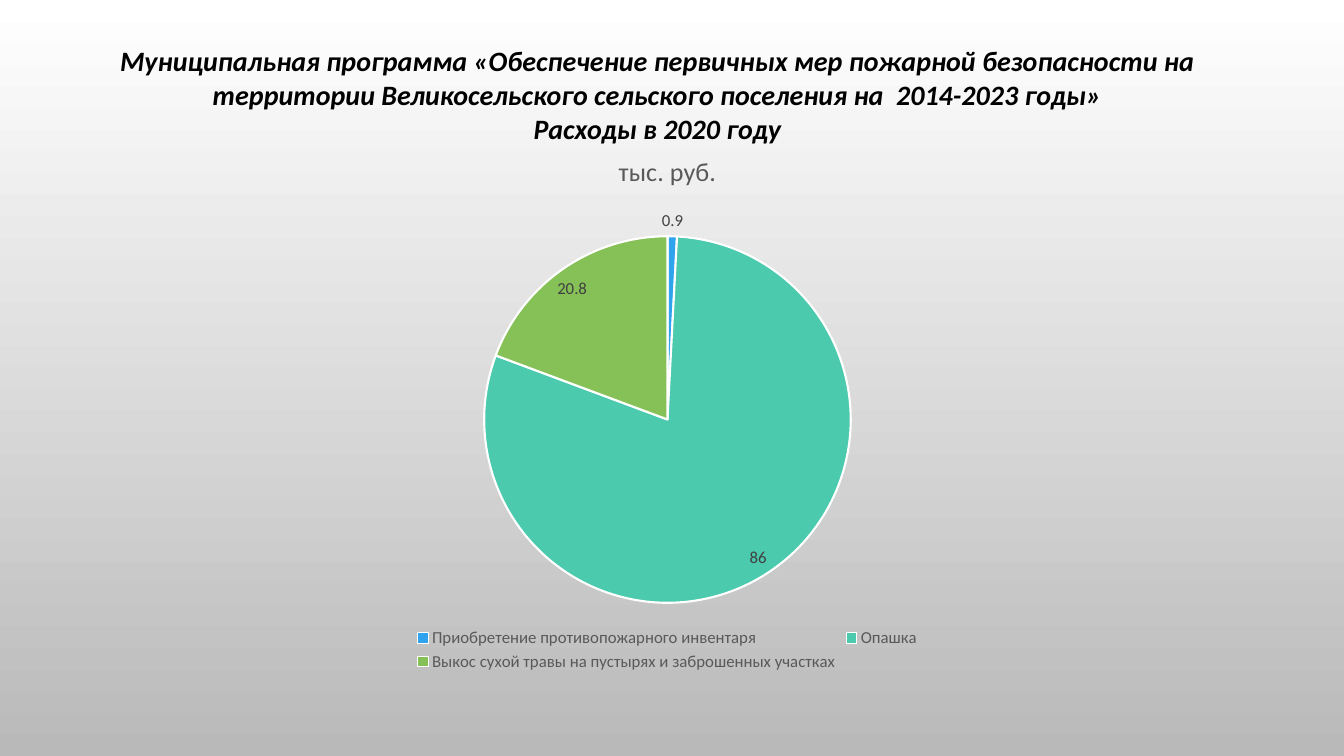
import pptx
import pptx.chart.data
import pptx.dml.color
import pptx.enum.chart
import pptx.enum.text
import pptx.util

RGB = pptx.dml.color.RGBColor
BLACK = RGB(0x00, 0x00, 0x00)
WHITE = RGB(0xFF, 0xFF, 0xFF)
SILVER = RGB(0xB9, 0xB9, 0xB9)
GREY = RGB(0x59, 0x59, 0x59)
DARK = RGB(0x40, 0x40, 0x40)
BLUE = RGB(0x2F, 0xA3, 0xEE)
TEAL = RGB(0x4B, 0xCA, 0xAD)
GREEN = RGB(0x86, 0xC1, 0x57)
FACE = "Calibri"
SCALE = 914400 / 100.8


def px(*nums):
    return [pptx.util.Emu(round(n * SCALE)) for n in nums]


def write(frame, text, size=12, color=GREY, bold=False, italic=False):
    for i, line in enumerate(text.split("\n")):
        para = frame.add_paragraph() if i else frame.paragraphs[0]
        para.alignment = pptx.enum.text.PP_ALIGN.CENTER
        run = para.add_run()
        run.text = line
        font = run.font
        font.name, font.size = FACE, pptx.util.Pt(size)
        font.bold, font.italic = bold, italic
        font.color.rgb = color


deck = pptx.Presentation()
deck.slide_width, deck.slide_height = px(1344, 756)
slide = deck.slides.add_slide(deck.slide_layouts[6])

back = slide.background.fill
back.gradient()
back.gradient_angle = 270
for stop, color, spot in zip(back.gradient_stops, (WHITE, SILVER), (0, 1)):
    stop.color.rgb = color
    stop.position = spot

head = slide.shapes.add_textbox(*px(39, 39, 1237, 112)).text_frame
head.word_wrap = True
write(
    head,
    "Муниципальная программа «Обеспечение первичных мер пожарной безопасности на "
    "территории Великосельского сельского поселения на  2014-2023 годы»\n"
    "Расходы в 2020 году",
    size=20, color=BLACK, bold=True, italic=True,
)

costs = [
    ("Приобретение противопожарного инвентаря", 0.9, BLUE),
    ("Опашка", 86, TEAL),
    ("Выкос сухой травы на пустырях и заброшенных участках", 20.8, GREEN),
]
data = pptx.chart.data.CategoryChartData()
data.categories = [name for name, cost, color in costs]
data.add_series("тыс. руб.", [cost for name, cost, color in costs])
chart = slide.shapes.add_chart(
    pptx.enum.chart.XL_CHART_TYPE.PIE, *px(92, 132, 1151, 544), data
).chart
chart.font.name = FACE
chart.font.size = pptx.util.Pt(10)
chart.font.color.rgb = BLACK

chart.has_title = True
write(chart.chart_title.text_frame, "тыс. руб.", size=18.6)
chart.chart_title.include_in_layout = False

chart.has_legend = True
legend = chart.legend
legend.position = pptx.enum.chart.XL_LEGEND_POSITION.BOTTOM
legend.include_in_layout = False

plot = chart.plots[0]
plot.vary_by_categories = True
plot.has_data_labels = True
labels = plot.data_labels
labels.show_value = True
labels.show_percentage = False
labels.position = pptx.enum.chart.XL_LABEL_POSITION.BEST_FIT

for font, color in ((legend.font, GREY), (labels.font, DARK)):
    font.name, font.size = FACE, pptx.util.Pt(12)
    font.color.rgb = color

for i, (name, cost, color) in enumerate(costs):
    slice = plot.series[0].points[i].format
    slice.fill.solid()
    slice.fill.fore_color.rgb = color
    slice.line.color.rgb = WHITE
    slice.line.width = pptx.util.Pt(1.5)

deck.save("out.pptx")
